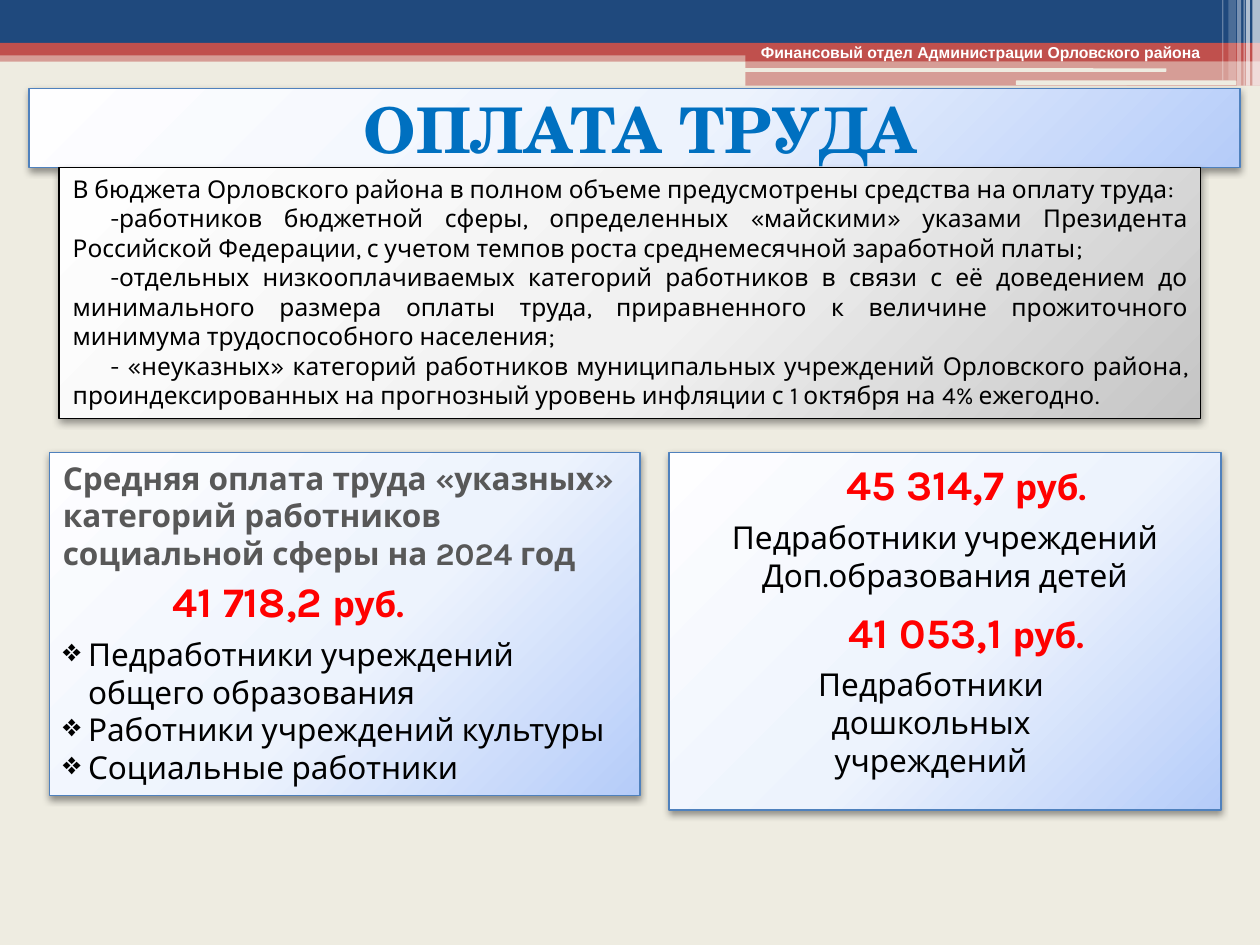
from lxml import etree
from pptx import Presentation
from pptx.dml.color import RGBColor
from pptx.enum.shapes import MSO_SHAPE
from pptx.enum.text import MSO_ANCHOR, MSO_AUTO_SIZE, PP_ALIGN
from pptx.oxml import parse_xml
from pptx.oxml.ns import nsdecls, qn
from pptx.util import Pt

COLORS = {
    "cream": "EEECE1", "navy": "1F497D", "brick": "C0504D", "white": "FFFFFF",
    "title": "0070C0", "black": "000000", "gray": "585858", "red": "FF0000",
    "blue line": "4F81BD",
}
BLUE_GRADIENT = [(0, "FEFEFF"), (55, "EDF3FD"), (100, "B5CCF9")]
GRAY_GRADIENT = [(0, "FEFEFE"), (55, "F1F1F1"), (100, "C5C5C5")]

# Header decoration: left, top, width, height, colour, opacity %
BANDS = [
    (0, 28.8, 720, 6.5, "brick", 50),
    (0, 0, 720, 24.5, "navy", 100),
    (0, 24.5, 720, 7.2, "brick", 100),
    (426, 28, 294, 7, "brick", 100),
    (426, 35, 294, 14, "brick", 50),
]
PILLS = [(425.5, 39, 241, 2, "cream", 100), (580.5, 46, 126, 2.6, "cream", 100)]
STRIPES = [
    (715.7, 0, 4.3, 49, "white", 65),
    (712, 0, 2.2, 49, "white", 65),
    (710.6, 0, 0.7, 49, "white", 60),
    (707, 0, 2.2, 49, "white", 40),
    (702, 0, 4.3, 46, "white", 20),
    (698.4, 0, 0.7, 46, "white", 30),
]

DEPARTMENT = "Финансовый отдел Администрации Орловского района"
TITLE = "ОПЛАТА ТРУДА"

# Paragraph styles
BODY = {"size": 14, "align": PP_ALIGN.JUSTIFY, "left": 0.7}
ITEM = {**BODY, "first": 21.6}
LABEL = {"size": 18, "align": PP_ALIGN.CENTER}
AMOUNT = {"size": 24, "color": "red", "bold": True}
AMOUNT_CENTERED = {**AMOUNT, "align": PP_ALIGN.CENTER, "left": 24.5}
BULLET = {"size": 18, "left": 15.1, "first": -14.4, "bullet": "❖"}
CURRENCY = ("руб.", 20)

# Each paragraph: text runs (a run is text or (text, size)), style, space before
PANELS = [
    {
        "box": (33.8, 95.8, 652.3, 143.3), "gradient": GRAY_GRADIENT, "line": "black",
        "paragraphs": [
            (["В бюджета Орловского района в полном объеме предусмотрены средства "
              "на оплату труда:"], BODY, 0),
            (["-работников бюджетной сферы, определенных «майскими» указами "
              "Президента Российской Федерации, с учетом темпов роста "
              "среднемесячной заработной платы;"], ITEM, 0),
            (["-отдельных низкооплачиваемых категорий работников в связи с её "
              "доведением до минимального размера оплаты труда, приравненного "
              "к величине прожиточного минимума трудоспособного населения;"], ITEM, 0.1),
            (["- «неуказных» категорий работников муниципальных учреждений "
              "Орловского района, проиндексированных на прогнозный уровень "
              "инфляции с 1 октября на 4% ежегодно."], ITEM, 0.1),
        ],
    },
    {
        "box": (28.1, 258.5, 337.7, 196), "gradient": BLUE_GRADIENT, "line": "blue line",
        "paragraphs": [
            (["Средняя оплата труда «указных» категорий работников социальной "
              "сферы на 2024 год"],
             {"size": 18, "color": "gray", "bold": True, "left": 0.7}, 0),
            (["41 718,2 ", CURRENCY], {**AMOUNT, "left": 63.4}, 1.9),
            (["Педработники учреждений общего образования"], BULLET, 5.2),
            (["Работники учреждений культуры"], BULLET, 0),
            (["Социальные работники"], BULLET, 0),
        ],
    },
    {
        "box": (382.3, 258.5, 315.4, 204.5), "gradient": BLUE_GRADIENT, "line": "blue line",
        "paragraphs": [
            (["45 314,7 ", CURRENCY], AMOUNT_CENTERED, 0),
            (["Педработники учреждений"], LABEL, 5.3),
            (["Доп.образования детей"], LABEL, 0),
            (["41 053,1 ", CURRENCY], AMOUNT_CENTERED, 7.5),
            (["Педработники дошкольных учреждений"],
             {**LABEL, "left": 33, "right": 49}, 4.4),
        ],
    },
]


def rgb(name):
    return RGBColor.from_string(COLORS[name])


def place(shape, box):
    shape.left, shape.top, shape.width, shape.height = map(Pt, box)


def style_font(font, name, size, color, bold):
    font.name, font.size, font.bold = name, Pt(size), bold
    font.color.rgb = rgb(color)


def add_band(slide, kind, band):
    *box, color, opacity = band
    shape = slide.shapes.add_shape(kind, *map(Pt, box))
    shape.shadow.inherit = False
    shape.fill.solid()
    shape.fill.fore_color.rgb = rgb(color)
    shape.line.fill.background()
    if opacity < 100:
        tint = shape.element.spPr.find(".//" + qn("a:srgbClr"))
        etree.SubElement(tint, qn("a:alpha"), val=str(opacity * 1000))


def style_panel(shape, gradient, line):
    """Radial gradient, thin outline and soft shadow below."""
    shape.fill.background()
    stops = "".join(f'<a:gs pos="{pos * 1000}"><a:srgbClr val="{color}"/></a:gs>'
                    for pos, color in gradient)
    properties = shape.element.spPr
    properties.replace(properties.find(qn("a:noFill")), parse_xml(
        f'<a:gradFill {nsdecls("a")} rotWithShape="1"><a:gsLst>{stops}</a:gsLst>'
        '<a:path path="circle"><a:fillToRect l="-40000" t="-90000" r="140000" '
        'b="190000"/></a:path></a:gradFill>'))
    shape.line.color.rgb = rgb(line)
    shape.line.width = Pt(0.75)
    shape.shadow.inherit = False
    properties.find(qn("a:effectLst")).append(parse_xml(
        f'<a:outerShdw {nsdecls("a")} blurRad="{Pt(4.1)}" dist="{Pt(2)}" dir="5400000" '
        'rotWithShape="0"><a:srgbClr val="000000"><a:alpha val="40000"/></a:srgbClr>'
        '</a:outerShdw>'))


def indent(paragraph, left=0, first=0, right=0):
    properties = paragraph._p.get_or_add_pPr()
    for key, value in (("marL", left), ("marR", right), ("indent", first)):
        properties.set(key, str(Pt(value)))
    return properties


def fill_paragraph(paragraph, runs, style, space_before):
    left = style.get("left", 0)
    properties = indent(paragraph, left, style.get("first", 0), style.get("right", 0))
    if "bullet" in style:
        etree.SubElement(properties, qn("a:buChar"), char=style["bullet"])
        tabs = etree.SubElement(properties, qn("a:tabLst"))
        etree.SubElement(tabs, qn("a:tab"), pos=str(Pt(left)), algn="l")
    paragraph.alignment = style.get("align", PP_ALIGN.LEFT)
    paragraph.space_before = Pt(space_before)
    style_font(paragraph.font, "Karla", style["size"], style.get("color", "black"),
               style.get("bold", False))
    for part in runs:
        text, size = part if isinstance(part, tuple) else (part, None)
        run = paragraph.add_run()
        run.text = text
        if size:
            run.font.size = Pt(size)


def add_panel(slide, panel):
    shape = slide.shapes.add_shape(MSO_SHAPE.RECTANGLE, *map(Pt, panel["box"]))
    style_panel(shape, panel["gradient"], panel["line"])
    frame = shape.text_frame
    frame.word_wrap = True
    frame.vertical_anchor = MSO_ANCHOR.TOP
    for number, content in enumerate(panel["paragraphs"]):
        fill_paragraph(frame.add_paragraph() if number else frame.paragraphs[0], *content)


def main():
    deck = Presentation()
    deck.slide_width, deck.slide_height = Pt(720), Pt(540)
    slide = deck.slides.add_slide(deck.slide_layouts[5])
    slide.background.fill.solid()
    slide.background.fill.fore_color.rgb = rgb("cream")

    # Header decoration
    for kind, bands in ((MSO_SHAPE.RECTANGLE, BANDS), (MSO_SHAPE.ROUNDED_RECTANGLE, PILLS),
                        (MSO_SHAPE.RECTANGLE, STRIPES)):
        for band in bands:
            add_band(slide, kind, band)

    # Department name
    department = slide.shapes.add_textbox(Pt(427.7), Pt(20.9), Pt(281.5), Pt(18)).text_frame
    department.word_wrap = True
    department.text = DEPARTMENT
    style_font(department.paragraphs[0].font, "Arial", 9, "white", True)

    # Title
    title = slide.shapes.title
    place(title, (16.6, 50.4, 692, 45.4))
    style_panel(title, BLUE_GRADIENT, "blue line")
    title.text_frame.text = TITLE
    title.text_frame.auto_size = MSO_AUTO_SIZE.NONE
    title.text_frame.vertical_anchor = MSO_ANCHOR.MIDDLE
    heading = title.text_frame.paragraphs[0]
    indent(heading, left=6.5)
    heading.alignment = PP_ALIGN.CENTER
    style_font(heading.font, "TeX Gyre Schola", 36, "title", True)

    # Text panels
    for panel in PANELS:
        add_panel(slide, panel)
    deck.save("out.pptx")


if __name__ == "__main__":
    main()
